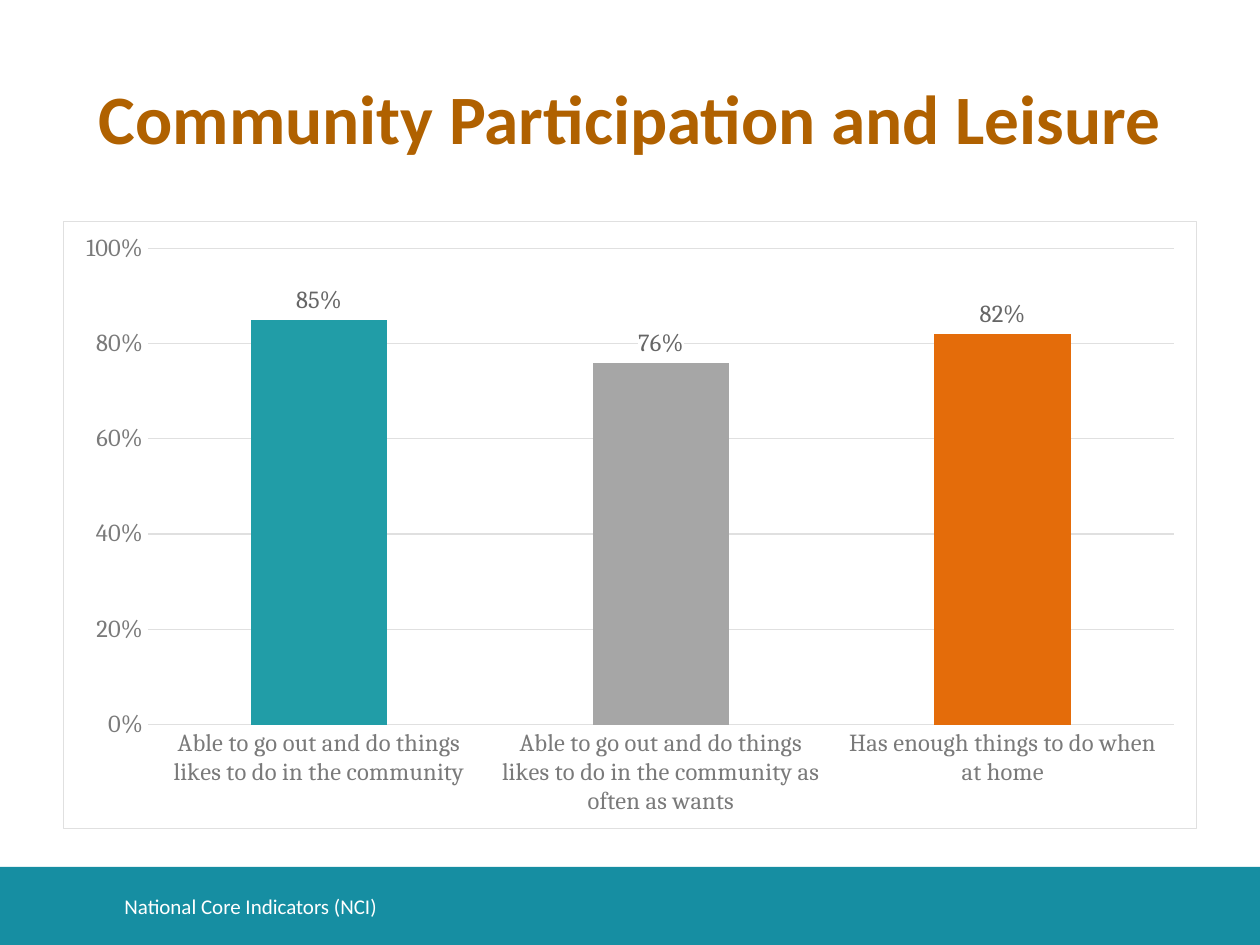
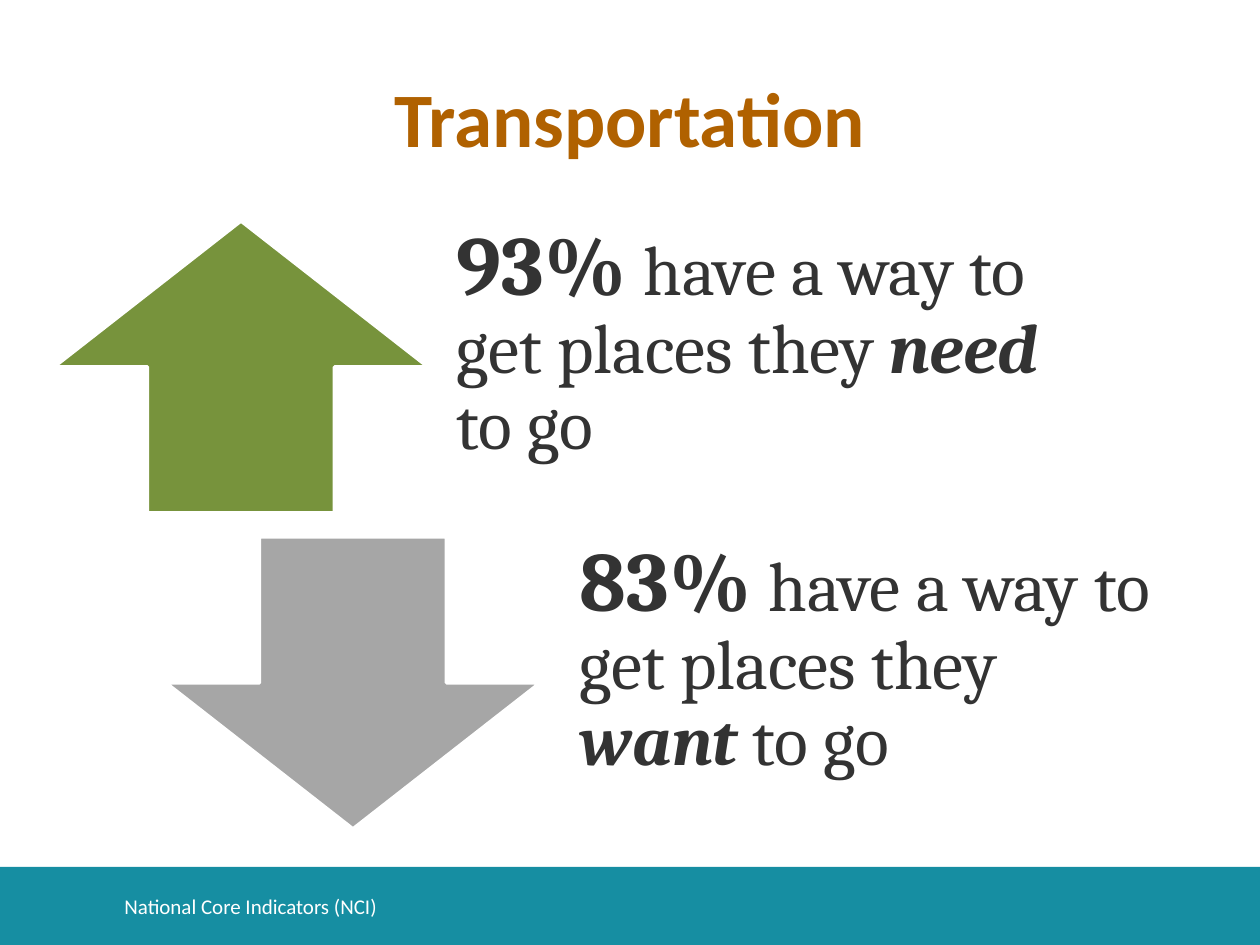
from pptx import Presentation
from pptx.chart.data import CategoryChartData
from pptx.dml.color import RGBColor
from pptx.enum.chart import XL_CHART_TYPE as ChartType, XL_LABEL_POSITION as LabelPosition, XL_TICK_MARK as Tick
from pptx.enum.shapes import MSO_SHAPE as Preset
from pptx.enum.text import MSO_ANCHOR as Anchor, MSO_AUTO_SIZE as AutoSize, PP_ALIGN as Align
from pptx.oxml import parse_xml
from pptx.oxml.ns import nsdecls, qn
from pptx.util import Emu, Pt

PX_PER_INCH = 126
HEADING_FONT, BODY_FONT = "Calibri", "Cambria"
COLORS = {
    "band": "168EA2", "title": "B06100", "white": "FFFFFF", "text": "333333",
    "teal": "219DA7", "grey": "A6A6A6", "orange": "E46C0A", "green": "77933C",
    "axis": "7A7A7A", "label": "666666", "grid": "E0E0E0",
}


def px(length):
    return Emu(round(length * 914400 / PX_PER_INCH))


def box(left, top, width, height):
    return px(left), px(top), px(width), px(height)


def color(name):
    return RGBColor.from_string(COLORS[name])


class Deck:
    def __init__(self):
        self.prs = Presentation()
        self.prs.slide_width, self.prs.slide_height = px(1260), px(945)
        self.slide = None

    def style(self, font, size, tint, name=BODY_FONT, bold=False, italic=False):
        font.name, font.size = name, Pt(size)
        font.bold, font.italic = bold, italic
        font.color.rgb = color(tint)

    def add_slide(self, heading, size):
        self.slide = self.prs.slides.add_slide(self.prs.slide_layouts[5])
        self.shape(Preset.RECTANGLE, (0, 867, 1260, 78), "band")
        title = self.slide.shapes.title
        title.left, title.top, title.width, title.height = box(63, 38, 1134, 158)
        frame = title.text_frame
        frame.text = heading
        frame.auto_size = AutoSize.NONE
        frame.vertical_anchor = Anchor.MIDDLE
        frame.paragraphs[0].alignment = Align.CENTER
        self.style(frame.paragraphs[0].runs[0].font, size, "title", HEADING_FONT, bold=True)
        footer = self.text_frame((112, 881, 932, 50))
        footer.text = "National Core Indicators (NCI)"
        self.style(footer.paragraphs[0].runs[0].font, 12, "white", HEADING_FONT)

    def shape(self, preset, place, fill, line=None):
        shape = self.slide.shapes.add_shape(preset, *box(*place))
        shape.shadow.inherit = False
        shape.fill.solid()
        shape.fill.fore_color.rgb = color(fill)
        if line:
            shape.line.color.rgb = color(line)
            shape.line.width = Pt(2)
        else:
            shape.line.fill.background()

    def text_frame(self, place):
        frame = self.slide.shapes.add_textbox(*box(*place)).text_frame
        frame.word_wrap = True
        frame.vertical_anchor = Anchor.MIDDLE
        return frame

    def statement(self, place, percent, stressed):
        frame = self.text_frame(place)
        frame.margin_left = frame.margin_right = frame.margin_bottom = px(47)
        frame.margin_top = 0
        paragraph = frame.paragraphs[0]
        paragraph.line_spacing = 0.9
        paragraph.space_after = Pt(14)
        for words, size, bold, italic in (
            (percent, 48, True, False),
            (" ", 44, False, False),
            ("have a way to get places they ", 40, False, False),
            (stressed, 40, True, True),
            (" to go", 40, False, False),
        ):
            run = paragraph.add_run()
            run.text = words
            self.style(run.font, size, "text", bold=bold, italic=italic)

    def grid_line(self, line):
        line.color.rgb = color("grid")
        line.width = Pt(0.75)

    def column_chart(self, place, shares, tints):
        data = CategoryChartData(number_format="0%")
        data.categories = list(shares)
        data.add_series("Series 1", shares.values())
        chart = self.slide.shapes.add_chart(ChartType.COLUMN_CLUSTERED, *box(*place), data).chart
        chart.has_legend = chart.has_title = False
        self.style(chart.font, 14, "text")
        self.chart_frame(chart)
        self.axes(chart)

        plot = chart.plots[0]
        plot.gap_width = 150
        plot.vary_by_categories = False
        series = plot.series[0]
        series.format.fill.solid()
        series.format.fill.fore_color.rgb = color(tints[0])
        for index, tint in enumerate(tints[1:], 1):
            fill = series.points[index].format.fill
            fill.solid()
            fill.fore_color.rgb = color(tint)
        labels = series.data_labels
        labels.show_value = True
        labels.number_format, labels.number_format_is_linked = "0%", False
        labels.position = LabelPosition.OUTSIDE_END
        self.style(labels.font, 14, "label")
        labels._element.find(qn("c:numFmt")).addnext(self.white_fill())

    def axes(self, chart):
        for axis in (chart.category_axis, chart.value_axis):
            axis.major_tick_mark = axis.minor_tick_mark = Tick.NONE
            self.style(axis.tick_labels.font, 14, "axis")
        self.grid_line(chart.category_axis.format.line)
        value_axis = chart.value_axis
        value_axis.minimum_scale, value_axis.maximum_scale = 0, 1
        value_axis.major_unit = 0.2
        value_axis.tick_labels.number_format = "0%"
        value_axis.tick_labels.number_format_is_linked = False
        value_axis.format.line.fill.background()
        self.grid_line(value_axis.major_gridlines.format.line)

    def white_fill(self, border=""):
        return parse_xml(
            f'<c:spPr {nsdecls("c", "a")}><a:solidFill><a:srgbClr val="{COLORS["white"]}"/>'
            f"</a:solidFill>{border}</c:spPr>"
        )

    def chart_frame(self, chart):
        border = (
            f'<a:ln w="{Pt(0.75)}"><a:solidFill><a:srgbClr val="{COLORS["grid"]}"/>'
            "</a:solidFill></a:ln>"
        )
        chart._chartSpace.find(qn("c:chart")).addnext(self.white_fill(border))


def main():
    deck = Deck()

    deck.add_slide("Community Participation and Leisure", 39.6)
    participation = {
        "Able to go out and do things likes to do in the community": 0.85,
        "Able to go out and do things likes to do in the community as often as wants": 0.76,
        "Has enough things to do when at home": 0.82,
    }
    deck.column_chart((63, 221, 1134, 608), participation, ("teal", "grey", "orange"))

    deck.add_slide("Transportation", 44)
    top, step, arrow_width, height = 221, 316, 374, 292
    transport = (
        (Preset.UP_ARROW, 54, "green", 410, 694, "93%", "need"),
        (Preset.DOWN_ARROW, 166, "grey", 533, 673, "83%", "want"),
    )
    for row, (arrow, arrow_left, tint, left, width, percent, stressed) in enumerate(transport):
        row_top = top + row * step
        deck.shape(arrow, (arrow_left, row_top, arrow_width, height), tint, line="white")
        deck.statement((left, row_top, width, height), percent, stressed)

    deck.prs.save("out.pptx")


if __name__ == "__main__":
    main()
